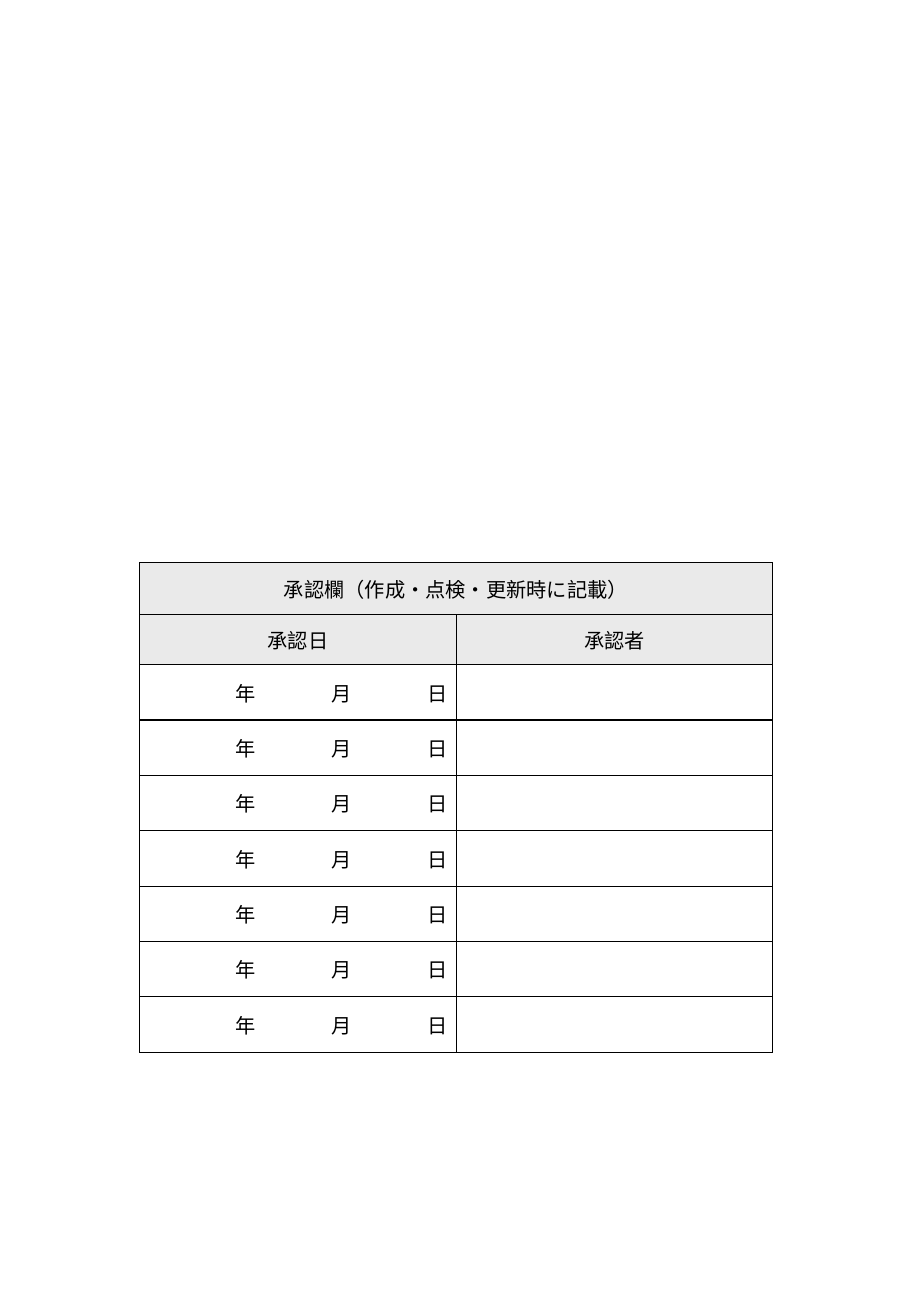
from lxml import etree
from pptx import Presentation
from pptx.dml.color import RGBColor
from pptx.enum.text import MSO_ANCHOR, PP_ALIGN
from pptx.oxml.ns import qn
from pptx.util import Inches, Pt

MIDDLE = MSO_ANCHOR.MIDDLE
CENTER, LEFT = PP_ALIGN.CENTER, PP_ALIGN.LEFT

# Content
TITLE = "承認欄（作成・点検・更新時に記載）"
DATE_HEAD, APPROVER_HEAD = "承認日", "承認者"
DATE_UNITS = {1: "年", 3: "月", 5: "日"}
ENTRY_ROWS = 7

# Look
COLORS = {"text": "000000", "line": "000000", "head": "EAEAEA"}
FONT, SIZE, LINE_WIDTH = "Noto Sans CJK JP", Pt(12), Pt(0.75)
NO_STYLE = "{2D5ABB26-0587-4C30-8999-92F81FD0307C}"

# Layout
LEFT_EDGE, TOP_EDGE, HEIGHT = 1.15, 4.63, 4.03
COLS = [0.79, 0.2, 0.59, 0.2, 0.59, 0.22, 2.6]
HEAD_ROWS = [0.43, 0.41]
ENTRY_HEIGHT = (HEIGHT - sum(HEAD_ROWS)) / ENTRY_ROWS
ROWS = HEAD_ROWS + [ENTRY_HEIGHT] * ENTRY_ROWS
LAST = len(COLS) - 1


def set_borders(cell, sides):
    tc_pr = cell._tc.get_or_add_tcPr()
    for side in "LRTB":
        ln = etree.SubElement(tc_pr, qn(f"a:ln{side}"), w=str(LINE_WIDTH))
        if side in sides:
            fill = etree.SubElement(ln, qn("a:solidFill"))
            etree.SubElement(fill, qn("a:srgbClr"), val=COLORS["line"])
        else:
            etree.SubElement(ln, qn("a:noFill"))


def write(cell, text, align):
    cell.vertical_anchor = MIDDLE
    p = cell.text_frame.paragraphs[0]
    p.alignment = align
    p.space_before = Pt(2.4)
    r = p.add_run()
    r.text = text
    r.font.size = SIZE
    r.font.name = FONT
    r.font.color.rgb = RGBColor.from_string(COLORS["text"])
    etree.SubElement(r.font._element, qn("a:ea"), typeface=FONT)


prs = Presentation()
prs.slide_width, prs.slide_height = Inches(7.5), Inches(10.83)
s = prs.slides.add_slide(prs.slide_layouts[6])

# Approval table
frame = s.shapes.add_table(len(ROWS), len(COLS), Inches(LEFT_EDGE), Inches(TOP_EDGE),
                           Inches(sum(COLS)), Inches(HEIGHT))
table = frame.table
table.first_row = table.horz_banding = False
table._tbl.tblPr.find(qn("a:tableStyleId")).text = NO_STYLE
for column, width in zip(table.columns, COLS):
    column.width = Inches(width)
for row, height in zip(table.rows, ROWS):
    row.height = Inches(height)

# Borders and fills: the date columns share one outline
for i in range(len(ROWS)):
    for j in range(len(COLS)):
        cell = table.cell(i, j)
        is_head = i < len(HEAD_ROWS)
        if is_head or j == LAST:
            sides = "LRTB"
        else:
            sides = "TB" + {0: "L", LAST - 1: "R"}.get(j, "")
        set_borders(cell, sides)
        if is_head:
            cell.fill.solid()
            cell.fill.fore_color.rgb = RGBColor.from_string(COLORS["head"])
        else:
            cell.fill.background()

# Headings
table.cell(0, 0).merge(table.cell(0, LAST))
table.cell(1, 0).merge(table.cell(1, LAST - 1))
write(table.cell(0, 0), TITLE, CENTER)
write(table.cell(1, 0), DATE_HEAD, CENTER)
write(table.cell(1, LAST), APPROVER_HEAD, CENTER)

# Date entries
for i in range(len(HEAD_ROWS), len(ROWS)):
    for j, unit in DATE_UNITS.items():
        cell = table.cell(i, j)
        cell.margin_left = cell.margin_right = 0
        write(cell, unit, LEFT)

prs.save("out.pptx")
